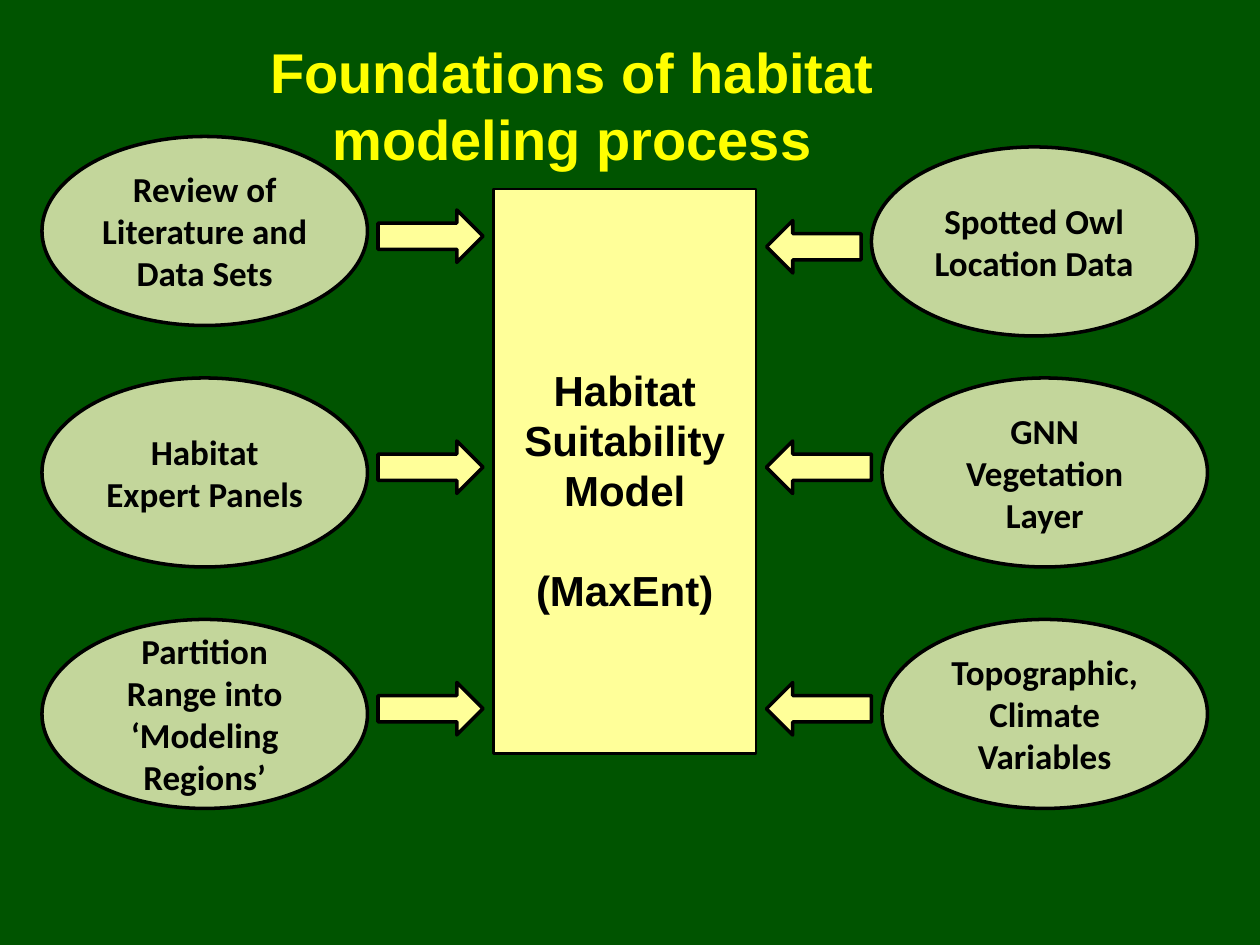
from pptx import Presentation
from pptx.dml.color import RGBColor
from pptx.enum.shapes import MSO_SHAPE
from pptx.enum.text import MSO_ANCHOR, PP_ALIGN
from pptx.util import Pt

RECTANGLE, OVAL, ARROW = MSO_SHAPE.RECTANGLE, MSO_SHAPE.OVAL, MSO_SHAPE.RIGHT_ARROW
TOP, MIDDLE = MSO_ANCHOR.TOP, MSO_ANCHOR.MIDDLE
CENTER = PP_ALIGN.CENTER

COLORS = {
    "background": "005400",
    "title": "FFFF00",
    "model": "FFFF99",
    "input": "C3D69B",
    "ink": "000000",
}
ROW_TOPS = (78, 216, 354)
ARROW_TOPS = (120, 252, 390)
LEFT_INPUTS = (
    "Review of Literature and Data Sets",
    "Habitat Expert Panels",
    "Partition Range into ‘Modeling Regions’",
)
RIGHT_INPUTS = (
    ("Spotted Owl Location Data", 498, 84, 126, 54),
    ("GNN Vegetation Layer", 504, 216, 252, 60),
    ("Topographic, Climate Variables", 504, 354, 390, 60),
)


class HabitatSlide:
    """Draws the styled elements of the habitat modeling diagram."""

    def __init__(self, presentation):
        self.slide = presentation.slides.add_slide(presentation.slide_layouts[6])
        fill = self.slide.background.fill
        fill.solid()
        fill.fore_color.rgb = self.color("background")

    def color(self, name):
        return RGBColor.from_string(COLORS[name])

    def add_outlined(self, kind, left, top, width, height, fill, line_width):
        shape = self.slide.shapes.add_shape(
            kind, Pt(left), Pt(top), Pt(width), Pt(height))
        shape.shadow.inherit = False
        shape.fill.solid()
        shape.fill.fore_color.rgb = self.color(fill)
        shape.line.color.rgb = self.color("ink")
        shape.line.width = Pt(line_width)
        return shape

    def add_text(self, shape, lines, font_name, size, color, anchor):
        frame = shape.text_frame
        frame.word_wrap = True
        frame.vertical_anchor = anchor
        for index, (text, space_before) in enumerate(lines):
            paragraph = frame.add_paragraph() if index else frame.paragraphs[0]
            paragraph.alignment = CENTER
            if space_before:
                paragraph.space_before = Pt(space_before)
            run = paragraph.add_run()
            run.text = text
            run.font.name = font_name
            run.font.size = Pt(size)
            run.font.bold = True
            run.font.color.rgb = self.color(color)

    def add_title(self, text):
        shape = self.slide.shapes.add_textbox(Pt(78), Pt(18), Pt(498), Pt(85))
        self.add_text(shape, [(text, 0)], "Arial", 32, "title", TOP)

    def add_model(self, lines):
        shape = self.add_outlined(RECTANGLE, 282, 108, 150, 322.5, "model", 1.5)
        shape.text_frame.margin_top = Pt(100)
        self.add_text(shape, lines, "Arial", 24, "ink", TOP)

    def add_oval(self, text, left, top):
        shape = self.add_outlined(OVAL, left, top, 186, 108, "input", 2)
        self.add_text(shape, [(text, 0)], "Calibri", 20, "ink", MIDDLE)

    def add_arrow(self, left, top, width, rotation=0):
        shape = self.add_outlined(ARROW, left, top, width, 30, "model", 2)
        shape.rotation = rotation


def main():
    presentation = Presentation()
    presentation.slide_width, presentation.slide_height = Pt(720), Pt(540)
    diagram = HabitatSlide(presentation)
    diagram.add_model([("Habitat", 0), ("Suitability Model", 0), ("(MaxEnt)", 28)])
    for text, top, arrow_top in zip(LEFT_INPUTS, ROW_TOPS, ARROW_TOPS):
        diagram.add_oval(text, 24, top)
        diagram.add_arrow(216, arrow_top, 60)
    for text, left, top, arrow_top, arrow_width in RIGHT_INPUTS:
        diagram.add_oval(text, left, top)
        diagram.add_arrow(438, arrow_top, arrow_width, rotation=180)
    diagram.add_title("Foundations of habitat modeling process")
    presentation.save("out.pptx")


if __name__ == "__main__":
    main()
